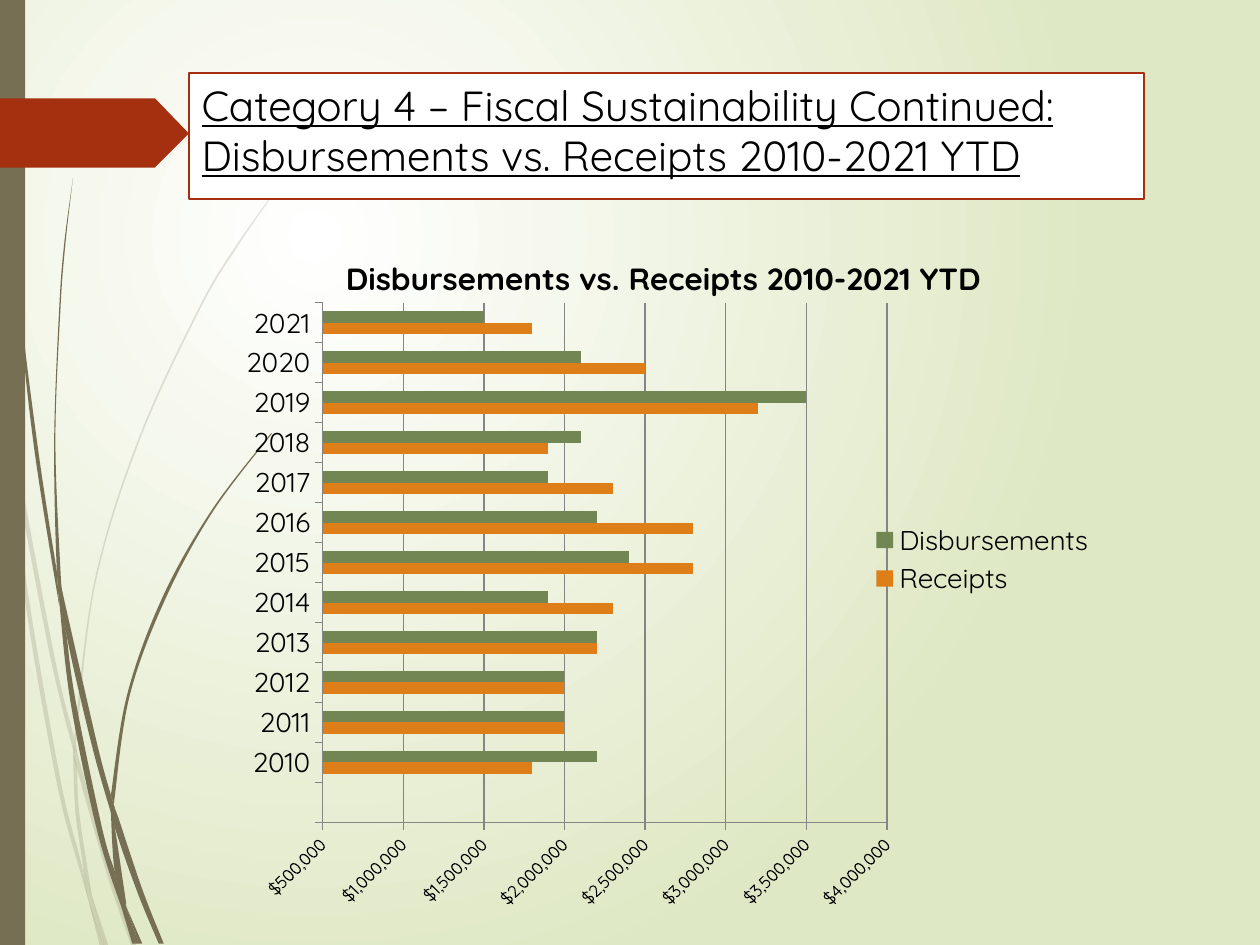
"""Build the disbursements versus receipts slide."""
from lxml import etree
from pptx import Presentation
from pptx import util as u
from pptx.chart import data
from pptx.dml.color import RGBColor
from pptx.enum import chart as ch, text
from pptx.oxml.ns import qn

FONT = "Quicksand"
BLACK, WHITE = RGBColor(0, 0, 0), RGBColor(255, 255, 255)
PALE, OLIVE = RGBColor(0xDF, 0xE8, 0xC4), RGBColor(0x76, 0x6F, 0x54)
RED, GRAY = RGBColor(0xA5, 0x30, 0x10), RGBColor(0x85, 0x85, 0x85)
ORANGE, GREEN = RGBColor(0xDE, 0x7E, 0x18), RGBColor(0x72, 0x86, 0x53)

TITLE = "Category 4 – Fiscal Sustainability Continued:\vDisbursements vs. Receipts 2010-2021 YTD"
CHART_TITLE = "Disbursements vs. Receipts 2010-2021 YTD"
YEARS = [""] + [str(year) for year in range(2010, 2022)]
UNIT = 100000
SERIES = [
    ("Receipts", ORANGE, [18, 20, 20, 22, 23, 28, 28, 23, 19, 32, 25, 18]),
    ("Disbursements", GREEN, [22, 20, 20, 22, 19, 24, 22, 19, 21, 35, 21, 15]),
]

PALE_STRANDS = [
    ([(0, 2.82), (.06, 3.22), (.08, 3.5)], [(.07, 3.44), (0, 2.99)]),
    ([(.1, 3.45), (.43, 5.2), (.59, 5.86)], [(.59, 5.99), (.4, 5.22), (.12, 3.76)]),
    ([(.61, 5.96), (.64, 6.07), (.88, 6.92), (1.08, 7.5)], [(1.04, 7.5), (.85, 6.94), (.61, 6.1)]),
    ([(.73, 7.11), (.86, 7.5)], [(.83, 7.5)]),
    ([(.08, 3.5), (.12, 3.76), (.22, 4.69), (.48, 6.19), (.64, 6.83), (.7, 7.14)],
     [(.64, 6.93), (.45, 6.21), (.19, 4.7), (.08, 3.5)]),
    ([(.58, 5.99), (.61, 6.1), (.63, 6.46), (.73, 7.11)], [(.67, 6.92), (.6, 6.46), (.58, 5.99)]),
    ([(.61, 5.96), (.61, 5.84), (.76, 4.62), (1.11, 3.49), (1.59, 2.45), (1.87, 1.98), (2.17, 1.54)],
     [(2.17, 1.53), (1.86, 1.97), (1.58, 2.44), (1.1, 3.48), (.75, 4.61), (.59, 5.84)]),
    ([(.7, 7.14), (.79, 7.5)], [(.82, 7.5)]),
    ([(.61, 6.1), (.61, 5.96), (.59, 5.86)], [(.58, 5.99)]),
    ([(.65, 6.83), (.7, 7.14), (.82, 7.5)], [(.83, 7.5), (.73, 7.11), (.67, 6.92)]),
]
DARK_STRANDS = [
    ([(.02, 0), (.05, 1.1), (.14, 2.33), (.27, 3.55), (.47, 4.81)],
     [(.45, 4.53), (.3, 3.55), (.15, 2.32), (.06, 1.09), (.03, 0)]),
    ([(.5, 4.72), (.53, 5.05), (.73, 5.92), (.88, 6.45)], [(.88, 6.31), (.77, 5.9), (.5, 4.72)]),
    ([(.91, 6.41), (.91, 6.56), (1.09, 7.08), (1.26, 7.49)], [(1.3, 7.49), (1.13, 7.06), (.94, 6.49)]),
    ([(.47, 4.77), (.56, 5.57), (.77, 6.59), (.97, 7.22)],
     [(.91, 6.91), (.81, 6.57), (.6, 5.56), (.53, 5.05)]),
    ([(.5, 4.72), (.48, 4.53), (.44, 3.49), (.48, 2.45), (.52, 1.93), (.58, 1.41)],
     [(.58, 1.41), (.51, 1.93), (.47, 2.45), (.43, 3.49), (.45, 4.49), (.49, 4.72)]),
    ([(1, 7.19), (1.1, 7.49)], [(1.13, 7.49)]),
    ([(.45, 4.49), (.47, 4.77), (.53, 5.05)], [(.5, 4.72)]),
    ([(.91, 6.41), (.91, 6.33), (1.03, 5.52), (1.31, 4.76), (1.69, 4.06), (2.16, 3.44)],
     [(2.15, 3.44), (1.68, 4.05), (1.29, 4.74), (1.01, 5.51), (.88, 6.31)]),
    ([(.97, 7.22), (1.05, 7.49)], [(1.08, 7.49)]),
    ([(.88, 6.45), (.91, 6.91), (1, 7.19)], [(1, 7.16), (.91, 6.56), (.88, 6.45)]),
    ([(.88, 6.45), (.91, 6.56), (.91, 6.41)], [(.88, 6.31)]),
    ([(.91, 6.91), (.97, 7.22), (1.08, 7.49)], [(1.1, 7.49), (1, 7.19), (.96, 7.06)]),
]
SIDE_BAR = (0, 0, .2, 7.5)
TAG = [(0, .78), (1.23, .78), (1.5, 1.06), (1.23, 1.33), (0, 1.33)]


def paint(shape, color):
    """Give a shape a plain fill without line or shadow."""
    shape.shadow.inherit = False
    shape.fill.solid()
    shape.fill.fore_color.rgb = color
    shape.line.fill.background()


def add_outline(canvas, points, color):
    """Draw one closed filled outline."""
    corners = [(u.Inches(x), u.Inches(y)) for x, y in points]
    builder = canvas.build_freeform(*corners[0])
    builder.add_line_segments(corners[1:], close=True)
    shape = builder.convert_to_shape()
    paint(shape, color)
    return shape


def controls(nodes):
    """Return the two control points of each curve through the nodes."""
    ends = [nodes[0], *nodes, nodes[-1]]
    return [
        [tuple(q + (r - p) / 6 for p, q, r in zip(a, b, c)),
         tuple(r - (s - q) / 6 for q, r, s in zip(b, c, d))]
        for a, b, c, d in zip(ends, ends[1:], ends[2:], ends[3:])]


def add_strand(canvas, there, back, opacity):
    """Draw one curved blade from its two edges."""
    shape = add_outline(canvas, there + back, OLIVE)
    bends = controls(there) + [None] + controls(back)
    lines = list(shape._element.iter(qn("a:lnTo")))
    for line, bend in zip(lines, bends):
        if bend:
            line.tag = qn("a:cubicBezTo")
            for index, (x, y) in enumerate(bend):
                point = etree.Element(qn("a:pt"), x=str(u.Inches(x) - shape.left),
                                      y=str(u.Inches(y) - shape.top))
                line.insert(index, point)
    if opacity < 100:
        tint = shape._element.spPr.find(qn("a:solidFill"))[0]
        etree.SubElement(tint, qn("a:alpha"), val=str(opacity * 1000))


def style_font(font, size, color=BLACK):
    """Apply the slide's typeface."""
    font.name, font.size, font.color.rgb = FONT, u.Pt(size), color


def paint_background(slide):
    """Fill the background with a radial gradient."""
    fill = slide.background.fill
    fill.gradient()
    for stop, color in zip(fill.gradient_stops, (WHITE, PALE)):
        stop.color.rgb = color
    gradient = next(slide._element.iter(qn("a:gradFill")))
    gradient.remove(gradient.find(qn("a:lin")))
    circle = etree.SubElement(gradient, qn("a:path"), path="circle")
    etree.SubElement(circle, qn("a:fillToRect"), l="50000", t="50000", r="100000", b="100000")


def place_title(slide):
    """Format the title placeholder and bring it forward."""
    title = slide.shapes.title
    title.left, title.top, title.width, title.height = map(u.Inches, (1.5, .58, 7.58, 1))
    title.fill.solid()
    title.fill.fore_color.rgb = WHITE
    title.line.color.rgb, title.line.width = RED, u.Pt(1.25)
    frame = title.text_frame
    frame.text = TITLE
    frame.word_wrap, frame.auto_size = True, text.MSO_AUTO_SIZE.NONE
    frame.vertical_anchor = text.MSO_ANCHOR.TOP
    para = frame.paragraphs[0]
    para.alignment = text.PP_ALIGN.LEFT
    for span in para.runs:
        style_font(span.font, 24)
        span.font.underline = True
    slide.shapes._spTree.append(title._element)


def set_layout(parent, index, **values):
    """Give a chart part a manual layout."""
    for old in parent.findall(qn("c:layout")):
        parent.remove(old)
    layout = etree.Element(qn("c:layout"))
    manual = etree.SubElement(layout, qn("c:manualLayout"))
    for name, value in values.items():
        etree.SubElement(manual, qn("c:" + name), val=str(value))
    parent.insert(index, layout)


def add_bars(slide):
    """Add the clustered bar chart."""
    table = data.CategoryChartData(number_format='"$"#,##0')
    table.categories = YEARS
    for name, _, values in SERIES:
        table.add_series(name, [None] + [value * UNIT for value in values])
    chart = slide.shapes.add_chart(
        ch.XL_CHART_TYPE.BAR_CLUSTERED, *map(u.Inches, (1.79, 1.83, 7, 5.38)), table).chart
    style_font(chart.font, 10)
    plot = chart.plots[0]
    plot.gap_width, plot.overlap, plot.vary_by_categories = 150, 0, False
    for series, (_, color, _) in zip(plot.series, SERIES):
        series.format.fill.solid()
        series.format.fill.fore_color.rgb = color
    chart.has_title = True
    heading = chart.chart_title.text_frame
    heading.text = CHART_TITLE
    style_font(heading.paragraphs[0].runs[0].font, 18)
    heading.paragraphs[0].runs[0].font.bold = True
    chart.has_legend = True
    chart.legend.position = ch.XL_LEGEND_POSITION.RIGHT
    chart.legend.include_in_layout = False
    style_font(chart.legend.font, 16)

    years, dollars = chart.category_axis, chart.value_axis
    dollars.minimum_scale, dollars.maximum_scale, dollars.major_unit = 500000, 4000000, 500000
    dollars.has_major_gridlines = True
    for axis, size in ((years, 16), (dollars, 10)):
        style_font(axis.tick_labels.font, size)
        axis.major_tick_mark = ch.XL_TICK_MARK.OUTSIDE
    for line in (years.format.line, dollars.format.line, dollars.major_gridlines.format.line):
        line.color.rgb, line.width = GRAY, u.Pt(.75)
    dollars.tick_labels.number_format = '"$"#,##0'
    dollars.tick_labels.number_format_is_linked = False
    dollars._element.find(qn("c:txPr")).find(qn("a:bodyPr")).set("rot", "-2700000")
    set_layout(chart.chart_title._element, 1, xMode="edge", yMode="edge", x=.13, y=.03)
    set_layout(chart._chartSpace.chart.plotArea, 0, layoutTarget="inner", xMode="edge",
               yMode="edge", x=.11, y=.11, w=.64, h=.79)


def main():
    deck = Presentation()
    deck.slide_width, deck.slide_height = u.Inches(10), u.Inches(7.5)
    slide = deck.slides.add_slide(deck.slide_layouts[5])
    paint_background(slide)
    for strands, opacity in ((PALE_STRANDS, 20), (DARK_STRANDS, 100)):
        group = slide.shapes.add_group_shape()
        for there, back in strands:
            add_strand(group.shapes, there, back, opacity)
    paint(slide.shapes.add_shape(1, *map(u.Inches, SIDE_BAR)), OLIVE)
    add_outline(slide.shapes, TAG, RED)
    place_title(slide)
    add_bars(slide)
    deck.save("out.pptx")


if __name__ == "__main__":
    main()
